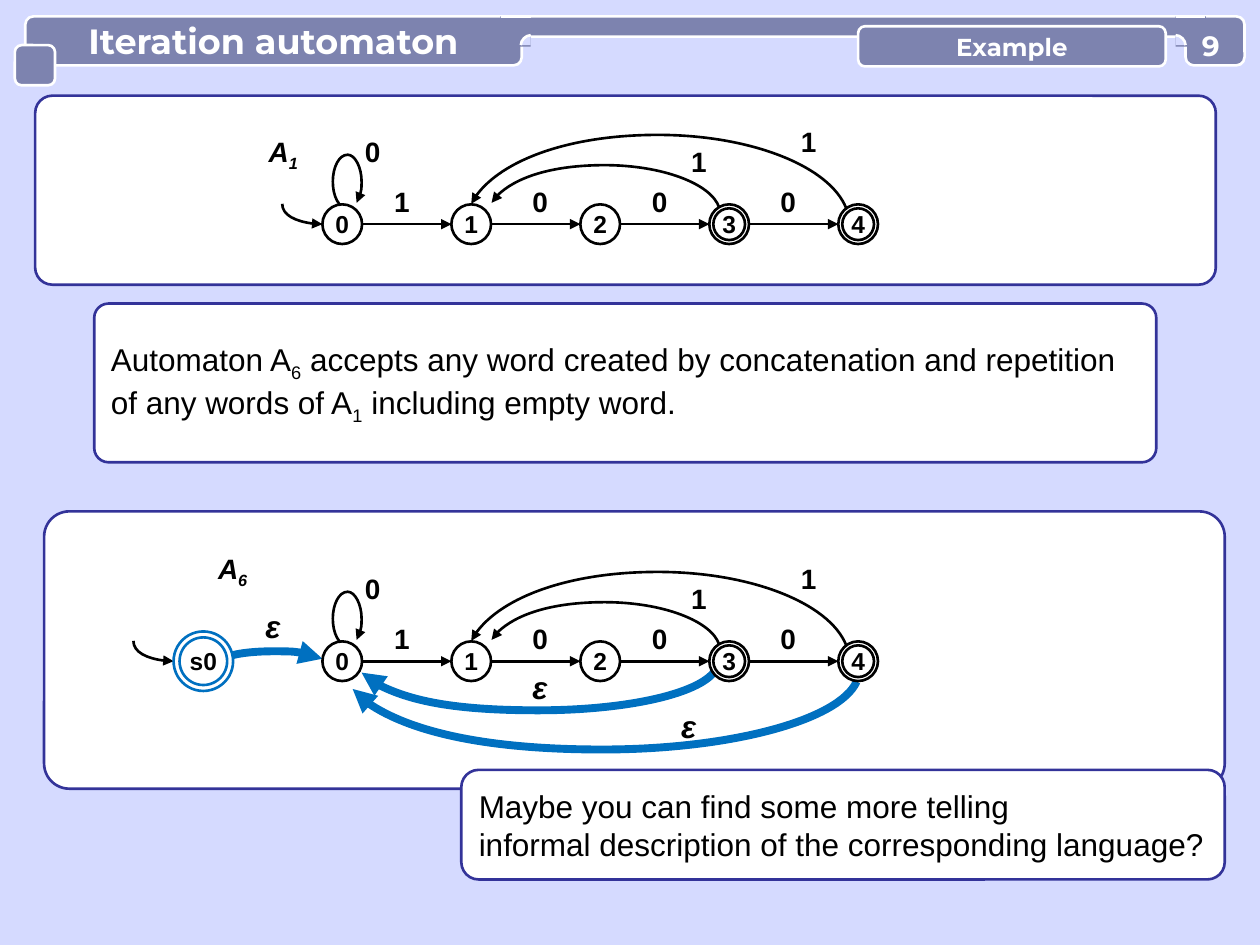
from pptx import Presentation, util as u
from pptx.dml.color import RGBColor
from pptx.enum import shapes as sh, text as tx
from pptx.oxml.ns import qn
from lxml import etree

Cm = u.Cm
COLORS = {"page": "D5DAFF", "bar": "7D83AF", "white": "FFFFFF",
          "border": "333399", "ink": "000000", "epsilon": "0070C0"}
RECT = sh.MSO_SHAPE.RECTANGLE
ROUND = sh.MSO_SHAPE.ROUNDED_RECTANGLE
OVAL = sh.MSO_SHAPE.OVAL


def rgb(name):
    return RGBColor.from_string(COLORS[name])


def block(text, box, kind=None, radius=None, fill=None, line=None, size=18, font="Arial",
          color="ink", bold=False, italic=False, align="CENTER", anchor="MIDDLE",
          wrap=False, inset=0):
    """Add a shape, or a text box if kind is None; ~ marks start and end of a subscript."""
    area = [Cm(v) for v in box]
    if kind is None:
        shape = slide.shapes.add_textbox(*area)
    else:
        shape = slide.shapes.add_shape(kind, *area)
        shape.shadow.inherit = False
        shape.fill.solid()
        shape.fill.fore_color.rgb = rgb(fill)
        if line:
            shape.line.color.rgb = rgb(line)
            shape.line.width = u.Pt(1.5)
        else:
            shape.line.fill.background()
    if radius:
        shape.adjustments[0] = radius
    frame = shape.text_frame
    frame.word_wrap = wrap
    frame.vertical_anchor = tx.MSO_ANCHOR[anchor]
    frame.margin_left = Cm(inset)
    frame.margin_right = frame.margin_top = frame.margin_bottom = 0
    for i, row in enumerate(text.split("\n") if text else []):
        para = frame.paragraphs[0] if i == 0 else frame.add_paragraph()
        para.alignment = tx.PP_ALIGN[align]
        for j, part in enumerate(row.split("~")):
            run = para.add_run()
            run.text = part
            run.font.size, run.font.name = u.Pt(size), font
            run.font.bold, run.font.italic = bold, italic
            run.font.color.rgb = rgb(color)
            if j % 2:
                run.font._element.set("baseline", "-25000")


def stroke(points, color="ink", width=1.5, arrow=True, fill=None):
    """Draw a line (two points) or Bezier curve; the arrowhead sits at the first point."""
    pts = [(Cm(x), Cm(y)) for x, y in points]
    if len(pts) == 2:
        shape = slide.shapes.add_connector(sh.MSO_CONNECTOR.STRAIGHT, *pts[0], *pts[1])
    else:
        builder = slide.shapes.build_freeform(*pts[0], scale=1.0)
        builder.add_line_segments(pts[1:], close=False)
        shape = builder.convert_to_shape()
        shape.fill.background()
        if fill:
            shape.fill.solid()
            shape.fill.fore_color.rgb = rgb(fill)
        outline = next(shape._element.iter(qn("a:path")))
        corners = outline.findall(qn("a:lnTo"))
        for i in range(0, len(corners), 3):
            bezier = etree.SubElement(outline, qn("a:cubicBezTo"))
            for corner in corners[i:i + 3]:
                bezier.append(corner[0])
                outline.remove(corner)
    if color:
        shape.line.color.rgb = rgb(color)
        shape.line.width = u.Pt(width)
        if arrow:
            etree.SubElement(shape.line._get_or_add_ln(), qn("a:headEnd"), type="triangle")
    else:
        shape.line.fill.background()
    etree.SubElement(shape._element.spPr, qn("a:effectLst"))


prs = Presentation()
prs.slide_width, prs.slide_height = Cm(25.4), Cm(19.05)
slide = prs.slides.add_slide(prs.slide_layouts[6])
slide.background.fill.solid()
slide.background.fill.fore_color.rgb = rgb("page")

# Header
tab = dict(kind=ROUND, fill="bar", line="white", radius=0.17,
           font="Montserrat", color="white", bold=True)
block("Iteration automaton", (0.51, 0.33, 10.01, 0.99), size=20, **tab)
block("", (10.31, 0.33, 13.79, 0.41), **{**tab, "radius": 0.5})
block("", (0.3, 0.91, 0.81, 0.81), **tab)
block("", (23.9, 0.33, 1.19, 0.99), **tab)
for edge, side in ((10.7, -1), (23.7, 1)):
    block("", (min(edge, edge + side * 0.61), 0.33, 0.61, 0.61), kind=RECT, fill="bar")
    stroke([(edge, 0.33), (edge + side * 0.6, 0.33)], "white", arrow=False)
    fillet = [(edge, 0.71), (edge + side * 0.1, 0.71),
              (edge + side * 0.2, 0.81), (edge + side * 0.2, 0.91)]
    stroke(fillet + [(edge, 0.91)] * 3, color=None, fill="page")
    stroke(fillet, "white", arrow=False)
block("Example", (17.3, 0.53, 6.2, 0.81), size=14, **tab)
block("9", (23.9, 0.56, 1.02, 0.69), size=16, font="Montserrat", color="white", bold=True)

# Panels
panel = dict(kind=ROUND, fill="white", line="border", align="LEFT", wrap=True, inset=0.25)
block("", (0.71, 1.93, 23.8, 3.81), radius=0.091, **panel)
block("", (0.89, 10.31, 23.8, 5.59), radius=0.091, **panel)
block("Automaton A~6~ accepts any word created by concatenation and repetition\n"
      "of any words of A~1~ including empty word.",
      (1.9, 6.12, 21.41, 3.2), radius=0.09, **panel)

# Automata: curve and label heights are relative to the axis through the states
FIRST, PITCH, STATE = 6.9, 2.6, 0.8
SELF_LOOP = [(7.19, -0.43), (7.26, -0.53), (7.29, -0.69), (7.29, -0.86), (7.29, -1.14),
             (7.16, -1.4), (7.01, -1.4), (6.83, -1.4), (6.71, -1.14), (6.71, -0.86),
             (6.71, -0.56), (6.83, -0.33), (7.01, -0.3)]
BACK_FROM_4 = [(9.5, -0.41), (9.91, -1.22), (11.48, -1.8), (13.26, -1.8),
               (15.21, -1.8), (16.84, -1.12), (17.09, -0.23)]
BACK_FROM_3 = [(9.91, -0.43), (10.16, -0.86), (11.1, -1.19), (12.19, -1.19),
               (13.36, -1.19), (14.35, -0.81), (14.5, -0.33)]
EPSILON_MOVES = [
    [(7.29, 0.23), (7.7, 0.69), (9.14, 0.99), (10.85, 0.99),
     (12.67, 0.99), (14.22, 0.64), (14.45, 0.13)],
    [(7.11, 0.56), (7.65, 1.27), (9.73, 1.78), (12.14, 1.78),
     (14.73, 1.78), (16.92, 1.19), (17.27, 0.41)],
    [(6.5, -0.05), (6.4, -0.15), (5.97, -0.2), (5.51, -0.2),
     (5, -0.2), (4.57, -0.13), (4.5, -0.03)]]
SYMBOLS = [("0", 7.11, -1.8), ("1", 7.7, -0.79), ("0", 10.49, -0.79), ("0", 12.9, -0.79),
           ("0", 15.49, -0.79), ("1", 13.69, -1.6), ("1", 15.9, -2.01)]

for name, name_x, name_y, axis, entry, moves in (
        ("A~1~", 5.31, -1.8, 4.52, 6.5, []),
        ("A~6~", 4.29, -2.21, 13.33, 3.5, EPSILON_MOVES)):
    start = [(entry, 0), (entry - 0.43, 0), (entry - 0.81, -0.18), (entry - 0.81, -0.41)]
    for curve in (start, SELF_LOOP, BACK_FROM_4, BACK_FROM_3):
        stroke([(x, axis + y) for x, y in curve])
    for curve in moves:
        stroke([(x, axis + y) for x, y in curve], "epsilon", 4.5)
    for k in range(4):
        source = FIRST + k * PITCH
        stroke([(source + PITCH - STATE / 2, axis), (source + STATE / 2, axis)])

    states = [(str(k), FIRST + k * PITCH, STATE, "ink", k >= 3) for k in range(5)]
    if moves:
        states.append(("s0", 4.1, 1.2, "epsilon", True))
    for state, center, size, color, accepting in states:
        rings = [(size, ""), (size * 0.8, state)] if accepting else [(size, state)]
        for ring, caption in rings:
            block(caption, (center - ring / 2, axis - ring / 2, ring, ring), kind=OVAL,
                  fill="white", line=color, size=14, bold=True)

    for symbol, x, y in SYMBOLS + [(name, name_x, name_y)]:
        block(symbol, (x, axis + y, 0.8, 0.79), size=16, bold=True,
              italic=symbol == name, anchor="TOP")
    if moves:
        for x, y in ((10.49, 0), (13.49, 0.79), (5.11, -1.22)):
            block("ε", (x, axis + y, 0.79, 1.02), bold=True, italic=True)

block("Maybe you can find some more telling\n"
      "informal description of the corresponding language?",
      (9.3, 15.52, 15.39, 2.21), radius=0.158, **panel)

prs.save("out.pptx")
